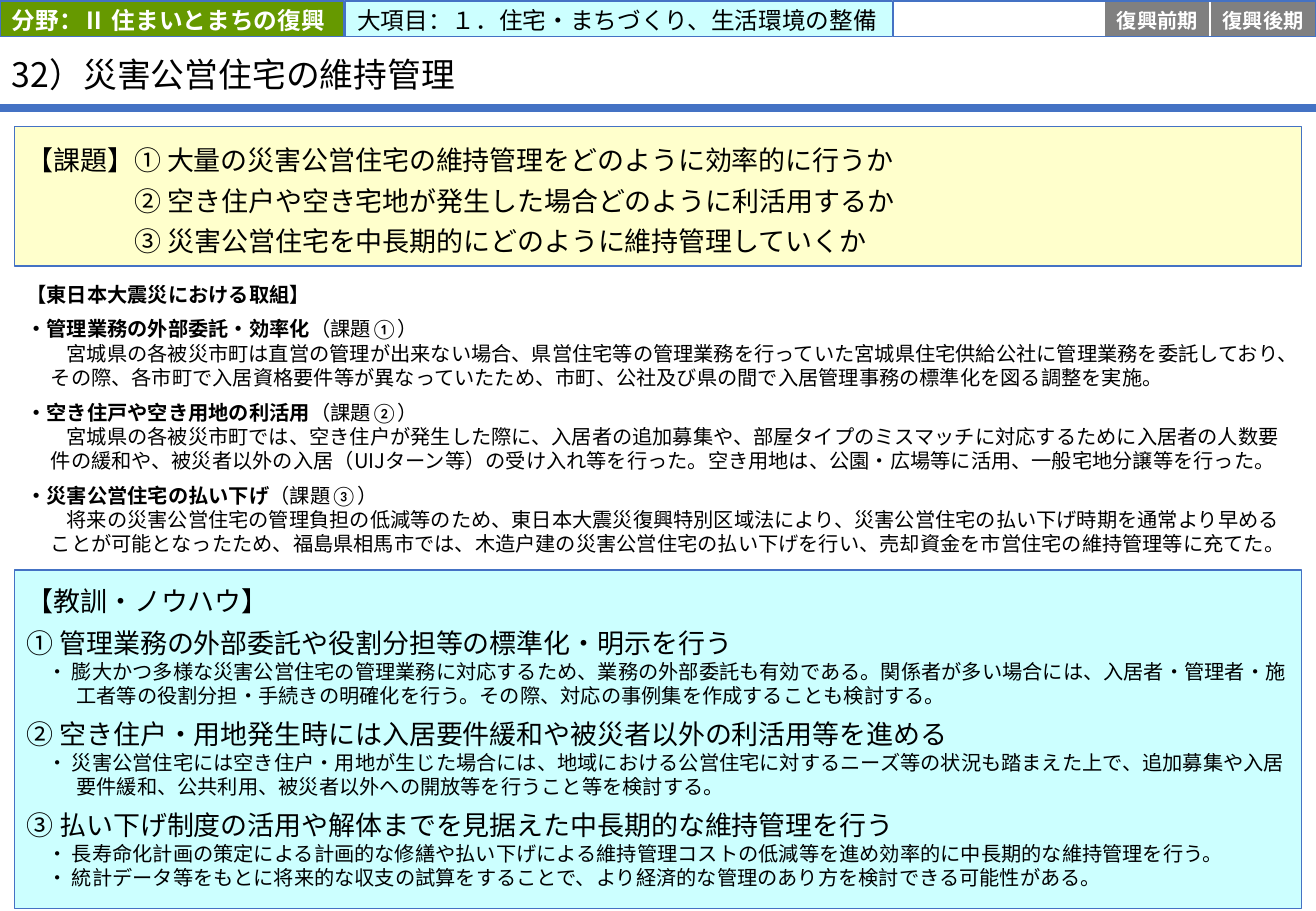
from pptx import Presentation
from pptx.dml.color import RGBColor
from pptx.enum.shapes import MSO_CONNECTOR, MSO_SHAPE
from pptx.enum.text import MSO_ANCHOR, PP_ALIGN
from pptx.oxml.ns import qn
from pptx.util import Inches, Pt
from lxml import etree

RECT, STRAIGHT = MSO_SHAPE.RECTANGLE, MSO_CONNECTOR.STRAIGHT
TOP, MIDDLE = MSO_ANCHOR.TOP, MSO_ANCHOR.MIDDLE
LEFT, CENTER = PP_ALIGN.LEFT, PP_ALIGN.CENTER
LATIN, GOTHIC = "Calibri", "Noto Sans CJK JP"
COLORS = {"blue": "4472C4", "green": "669900", "cyan": "CCFFFF", "yellow": "FFFFCC",
          "gray": "808080", "white": "FFFFFF", "black": "000000"}

WIDTH, HEIGHT = 10.83, 7.5
MARGIN = 0.12
CONTENT_WIDTH = WIDTH - 2 * MARGIN
HEADER_TOP, HEADER_HEIGHT = 0.01, 0.29
PHASE_WIDTH = 0.87

ISSUES = [
    "【課題】① 大量の災害公営住宅の維持管理をどのように効率的に行うか",
    "② 空き住戸や空き宅地が発生した場合どのように利活用するか",
    "③ 災害公営住宅を中長期的にどのように維持管理していくか",
]
EFFORTS = [
    ("・管理業務の外部委託・効率化", "（課題①）",
     "宮城県の各被災市町は直営の管理が出来ない場合、県営住宅等の管理業務を行っていた宮城県住宅供給公社に管理業務を委託しており、"
     "その際、各市町で入居資格要件等が異なっていたため、市町、公社及び県の間で入居管理事務の標準化を図る調整を実施。"),
    ("・空き住戸や空き用地の利活用", "（課題②）",
     "宮城県の各被災市町では、空き住戸が発生した際に、入居者の追加募集や、部屋タイプのミスマッチに対応するために入居者の人数要件の緩和や、"
     "被災者以外の入居（UIJターン等）の受け入れ等を行った。空き用地は、公園・広場等に活用、一般宅地分譲等を行った。"),
    ("・災害公営住宅の払い下げ", "（課題③）",
     "将来の災害公営住宅の管理負担の低減等のため、東日本大震災復興特別区域法により、災害公営住宅の払い下げ時期を通常より早めることが可能となったため、"
     "福島県相馬市では、木造戸建の災害公営住宅の払い下げを行い、売却資金を市営住宅の維持管理等に充てた。"),
]
LESSONS = [
    ("① 管理業務の外部委託や役割分担等の標準化・明示を行う",
     ["・ 膨大かつ多様な災害公営住宅の管理業務に対応するため、業務の外部委託も有効である。"
      "関係者が多い場合には、入居者・管理者・施工者等の役割分担・手続きの明確化を行う。その際、対応の事例集を作成することも検討する。"]),
    ("② 空き住戸・用地発生時には入居要件緩和や被災者以外の利活用等を進める",
     ["・ 災害公営住宅には空き住戸・用地が生じた場合には、地域における公営住宅に対するニーズ等の状況も踏まえた上で、"
      "追加募集や入居要件緩和、公共利用、被災者以外への開放等を行うこと等を検討する。"]),
    ("③ 払い下げ制度の活用や解体までを見据えた中長期的な維持管理を行う",
     ["・ 長寿命化計画の策定による計画的な修繕や払い下げによる維持管理コストの低減等を進め効率的に中長期的な維持管理を行う。",
      "・ 統計データ等をもとに将来的な収支の試算をすることで、より経済的な管理のあり方を検討できる可能性がある。"]),
]


def rgb(name):
    return RGBColor.from_string(COLORS[name])


def prepare_frame(frame, insets, anchor):
    frame.word_wrap = True
    frame.vertical_anchor = anchor
    (frame.margin_left, frame.margin_top,
     frame.margin_right, frame.margin_bottom) = map(Inches, insets)


def add_panel(slide, box, fill=None, line=None, insets=(0.1, 0.05, 0.1, 0.05), anchor=MIDDLE):
    """Draw a rectangle and return its text frame."""
    panel = slide.shapes.add_shape(RECT, *map(Inches, box))
    panel.shadow.inherit = False
    if fill:
        panel.fill.solid()
        panel.fill.fore_color.rgb = rgb(fill)
    else:
        panel.fill.background()
    if line:
        panel.line.color.rgb = rgb(line)
        panel.line.width = Pt(1)
    else:
        panel.line.fill.background()
    prepare_frame(panel.text_frame, insets, anchor)
    return panel.text_frame


def add_run(paragraph, text, size=12, font=GOTHIC, color="black", bold=False):
    run = paragraph.add_run()
    run.text = text
    run.font.size, run.font.bold, run.font.name = Pt(size), bold, font
    run.font.color.rgb = rgb(color)
    east_asian = etree.SubElement(run.font._element, qn("a:ea"))
    east_asian.set("typeface", font)


def write(frame, text, align=LEFT, before=0, spacing=None, margin=0, indent=0, **font):
    """Append a paragraph, filling the first one while it is still empty."""
    first = frame.paragraphs[0]
    paragraph = frame.add_paragraph() if first.runs else first
    paragraph.alignment = align
    paragraph.space_before = Pt(before)
    if spacing:
        paragraph.line_spacing = spacing
    properties = paragraph._p.get_or_add_pPr()
    properties.set("marL", str(Inches(margin)))
    properties.set("indent", str(Inches(indent)))
    add_run(paragraph, text, **font)
    return paragraph


def add_title(slide, box):
    left, top, width, height = box
    rule = slide.shapes.add_connector(STRAIGHT, Inches(0), Inches(top + height - 0.01),
                                      Inches(WIDTH), Inches(top + height - 0.01))
    rule.line.color.rgb = rgb("blue")
    rule.line.width = Pt(4.5)
    etree.SubElement(rule._element.spPr, qn("a:effectLst"))
    frame = slide.shapes.add_textbox(*map(Inches, box)).text_frame
    prepare_frame(frame, (0.1, 0.04, 0.1, 0), MIDDLE)
    write(frame, "32）災害公営住宅の維持管理", size=20, spacing=0.9)


def add_classification(slide, box):
    left, top, width, height = box
    field_width = 2.83
    insets = (0.1, 0.02, 0.1, 0)
    field = add_panel(slide, (left, top, field_width, height), "green", "blue", insets)
    write(field, "分野：Ⅱ 住まいとまちの復興", size=14, font=LATIN, color="white", bold=True)
    category = add_panel(slide, (left + field_width + 0.01, top, width - field_width - 0.01, height),
                         "cyan", "blue", insets)
    write(category, "大項目：１．住宅・まちづくり、生活環境の整備", size=14, font=LATIN)


def add_phases(slide, box):
    """Show the recovery phases, with those that do not apply left blank."""
    left, top, width, height = box
    phases = ["", "", "復興前期", "復興後期"]
    step = width / len(phases)
    for column, phase in enumerate(phases):
        cell = add_panel(slide, (left + column * step, top, step, height),
                         "gray" if phase else "white", "white", (0, 0.02, 0, 0))
        if phase:
            write(cell, phase, align=CENTER, font=LATIN, color="white", bold=True)
    add_panel(slide, box, line="blue")


def add_issues(slide, box):
    frame = add_panel(slide, box, "yellow", "blue", (0.1, 0.12, 0.1, 0.12))
    for number, issue in enumerate(ISSUES):
        write(frame, issue, size=16, spacing=Pt(24), margin=0.89 if number else 0)


def add_efforts(slide, box):
    frame = add_panel(slide, box, "white")
    write(frame, "【東日本大震災における取組】", font=LATIN, bold=True)
    for heading, issue, detail in EFFORTS:
        paragraph = write(frame, heading, before=6, font=LATIN, bold=True)
        add_run(paragraph, issue, font=LATIN)
        write(frame, detail, margin=0.2, indent=0.13)


def add_lessons(slide, box):
    frame = add_panel(slide, box, "cyan", "blue", (0.1, 0.12, 0.1, 0), TOP)
    write(frame, "【教訓・ノウハウ】", size=16)
    for heading, details in LESSONS:
        write(frame, heading, size=16, before=6)
        for detail in details:
            write(frame, detail, margin=0.41, indent=-0.24)


def main():
    deck = Presentation()
    deck.slide_width, deck.slide_height = Inches(WIDTH), Inches(HEIGHT)
    slide = deck.slides.add_slide(deck.slide_layouts[6])
    phases_width = 4 * PHASE_WIDTH
    phases_left = WIDTH - phases_width
    add_efforts(slide, (MARGIN, 2.33, CONTENT_WIDTH, 2.24))
    add_title(slide, (0, 0.32, 9.48, 0.58))
    add_classification(slide, (0, HEADER_TOP, phases_left + 0.02, HEADER_HEIGHT))
    add_issues(slide, (MARGIN, 1.04, CONTENT_WIDTH, 1.15))
    add_lessons(slide, (MARGIN, 4.69, CONTENT_WIDTH, 2.79))
    add_phases(slide, (phases_left, HEADER_TOP, phases_width, HEADER_HEIGHT))
    deck.save("out.pptx")


if __name__ == "__main__":
    main()
